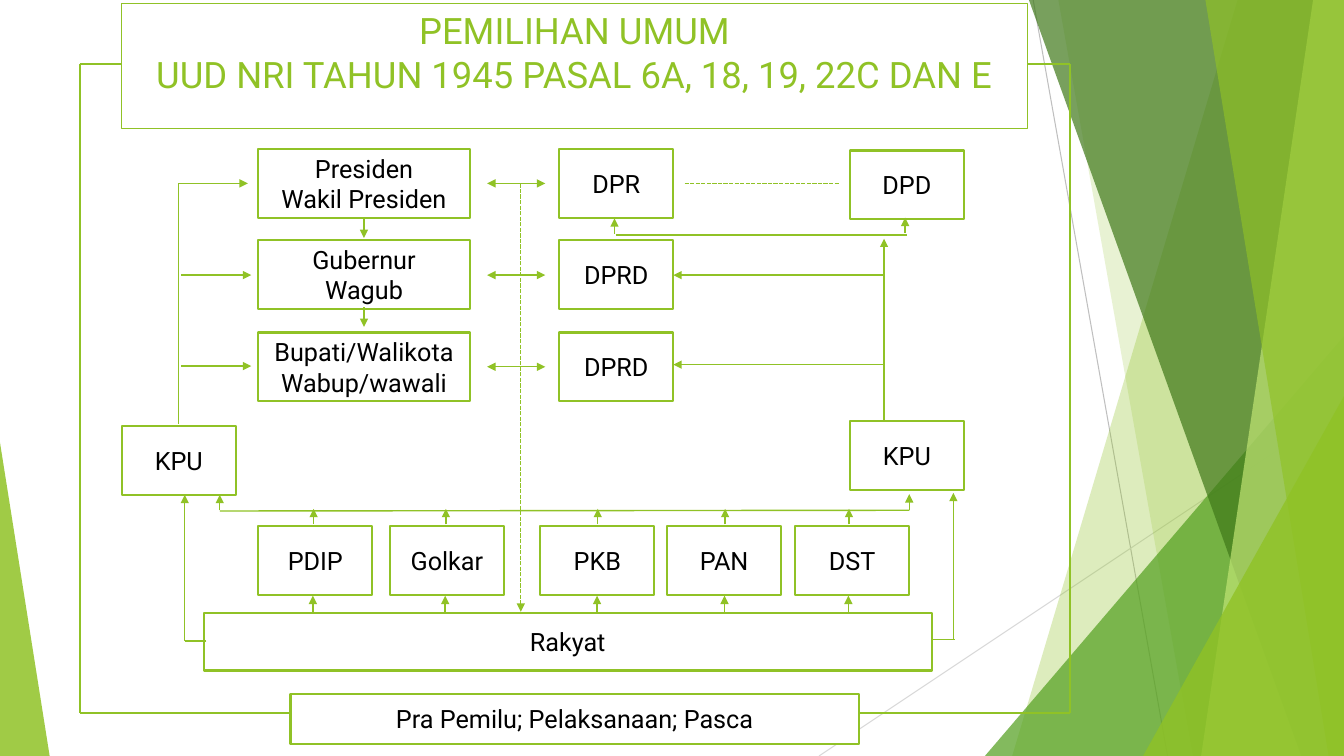
"""Build the slide on Indonesian general elections as a box-and-arrow diagram."""
from lxml import etree
from pptx import Presentation
from pptx.dml.color import RGBColor
from pptx.enum import dml, shapes, text
from pptx.oxml.ns import qn
from pptx.util import Pt

GREEN = "90C226"
WIDTH, HEIGHT = 960, 540

deck = Presentation()
deck.slide_width, deck.slide_height = Pt(WIDTH), Pt(HEIGHT)
page = deck.slides.add_slide(deck.slide_layouts[5])


def paint(target, color):
    """Give a fill or a line one solid colour."""
    target.fill.solid()
    target.fill.fore_color.rgb = RGBColor.from_string(color)


def connect(x1, y1, x2, y2, ends="", color=GREEN, width=1, dashed=False):
    """Draw a straight line; ends may name "head" and "tail" arrows."""
    line = page.shapes.add_connector(
        shapes.MSO_CONNECTOR.STRAIGHT, Pt(x1), Pt(y1), Pt(x2), Pt(y2))
    paint(line.line, color)
    line.line.width = Pt(width)
    if dashed:
        line.line.dash_style = dml.MSO_LINE.SQUARE_DOT
    properties = line._element.spPr
    for end in ends.split():
        etree.SubElement(properties.find(qn("a:ln")), qn(f"a:{end}End"), type="triangle")
    etree.SubElement(properties, qn("a:effectLst"))


connect(738, 0, 834, HEIGHT, color="BFBFBF", width=0.75)
connect(WIDTH, 290, 585, HEIGHT, color="D9D9D9", width=0.75)

# Bands give top x and bottom x; triangles give left, top, width and apex.
backdrop = [
    ("band", (884, 723), GREEN, 30),
    ("band", (756, 852), GREEN, 20),
    ("triangle", (703.5, 240, 256.5, 1), "54A021", 72),
    ("band", (735, 929.5), "3F7819", 70),
    ("band", (938, 858), "C0E474", 70),
    ("band", (861, 949), GREEN, 65),
    ("triangle", (816.5, 283, 143.5, 1), GREEN, 80),
    ("triangle", (0, 316, 35.5, 0), GREEN, 85),
]
for kind, geometry, color, opacity in backdrop:
    if kind == "band":
        top_x, bottom_x = geometry
        outline = page.shapes.build_freeform(Pt(top_x), 0)
        outline.add_line_segments(
            [(Pt(x), Pt(y)) for x, y in
             ((WIDTH, 0), (WIDTH, HEIGHT), (bottom_x, HEIGHT))], close=True)
        facet = outline.convert_to_shape()
    else:
        left, top, width, apex = geometry
        facet = page.shapes.add_shape(
            shapes.MSO_SHAPE.ISOSCELES_TRIANGLE,
            Pt(left), Pt(top), Pt(width), Pt(HEIGHT - top))
        facet.adjustments[0] = apex
    paint(facet, color)
    facet.line.fill.background()
    facet.shadow.inherit = False
    tint = facet._element.spPr.find(qn("a:solidFill"))[0]
    etree.SubElement(tint, qn("a:alpha"), val=str(opacity * 1000))

title = page.shapes.title
title.left, title.top, title.width, title.height = Pt(87), Pt(2.5), Pt(647), Pt(89.5)
title.line.width = Pt(0.75)
paint(title.line, GREEN)
frame = title.text_frame
frame.text = "PEMILIHAN UMUM\vUUD NRI TAHUN 1945 PASAL 6A, 18, 19, 22C DAN E"
frame.auto_size = text.MSO_AUTO_SIZE.NONE
frame.vertical_anchor = text.MSO_ANCHOR.TOP
heading = frame.paragraphs[0]
heading.alignment = text.PP_ALIGN.CENTER
heading.font.name, heading.font.size = "Roboto", Pt(26)
heading.font.color.rgb = RGBColor.from_string(GREEN)

SMALL, WIDE, TALL = 81.5, 151, 49
boxes = [
    ("Presiden\nWakil Presiden", 184.5, 106.5, WIDE, TALL),
    ("Gubernur\nWagub", 184.5, 171.5, WIDE, TALL),
    ("Bupati/Walikota\nWabup/wawali", 184.5, 237.5, WIDE, TALL),
    ("DPR", 399.5, 106.5, SMALL, TALL),
    ("DPRD", 399.5, 171.5, SMALL, TALL),
    ("DPRD", 399.5, 237.5, SMALL, TALL),
    ("DPD", 607, 107.5, SMALL, TALL),
    ("KPU", 87, 304.5, SMALL, TALL),
    ("KPU", 607, 301, SMALL, TALL),
    ("Rakyat", 145.5, 438, 520, 41),
    ("Pra Pemilu; Pelaksanaan; Pasca", 207.5, 495.5, 406, 36),
]
parties = {"PDIP": 184.5, "Golkar": 278.5, "PKB": 386, "PAN": 476.5, "DST": 568}
boxes += [(name, left, 376, SMALL, TALL) for name, left in parties.items()]
for label, left, top, width, height in boxes:
    box = page.shapes.add_shape(
        shapes.MSO_SHAPE.RECTANGLE, Pt(left), Pt(top), Pt(width), Pt(height))
    box.shadow.inherit = False
    paint(box, "FFFFFF")
    paint(box.line, GREEN)
    box.line.width = Pt(1.5)
    box.text_frame.text = label
    box.text_frame.vertical_anchor = text.MSO_ANCHOR.MIDDLE
    for para in box.text_frame.paragraphs:
        para.alignment = text.PP_ALIGN.CENTER
        para.font.name, para.font.size = "Roboto", Pt(18)
        para.font.color.rgb = RGBColor.from_string("000000")

for y in (131, 196.5, 262):
    connect(348, y, 389.5, y, "head tail")
for x in (223.5, 318, 426.5, 517.5, 606):
    connect(x, 437, x, 425.5, "tail")
    connect(x + 0.5, 374.5, x + 0.5, 363.5, "tail")

arrows = [
    (260, 155.5, 260, 170), (260, 219.5, 260, 233.5),
    (649.5, 364, 649.5, 353), (157, 364.5, 157, 353.5),
    (127.5, 131, 177, 131), (129.5, 196.5, 179.5, 196.5), (129.5, 261.5, 179.5, 261.5),
    (132, 458, 132, 353.5), (681, 457, 681, 352),
    (646.5, 166.5, 646.5, 155.5), (439, 167, 439, 156),
    (631.5, 300, 631.5, 170.5), (631.5, 196.5, 481, 196.5), (631.5, 260.5, 481, 260.5),
]
for arrow in arrows:
    connect(*arrow, "tail")

links = [
    (157, 365, 649.5, 364.5), (127.5, 131, 127.5, 303),
    (147.5, 458, 132, 458), (682, 457, 666, 457), (440, 168, 648, 168),
]
for link in links:
    connect(*link)

connect(372, 131, 372, 437, "tail", dashed=True)
connect(489, 131, 600, 131, dashed=True)

for side, title_edge, footer_edge in ((57, 87, 207.5), (764, 734, 613.5)):
    connect(side, 46, side, 509, width=1.5)
    connect(side, 46, title_edge, 46, width=1.5)
    connect(side, 509, footer_edge, 509, width=1.5)

deck.save("out.pptx")
